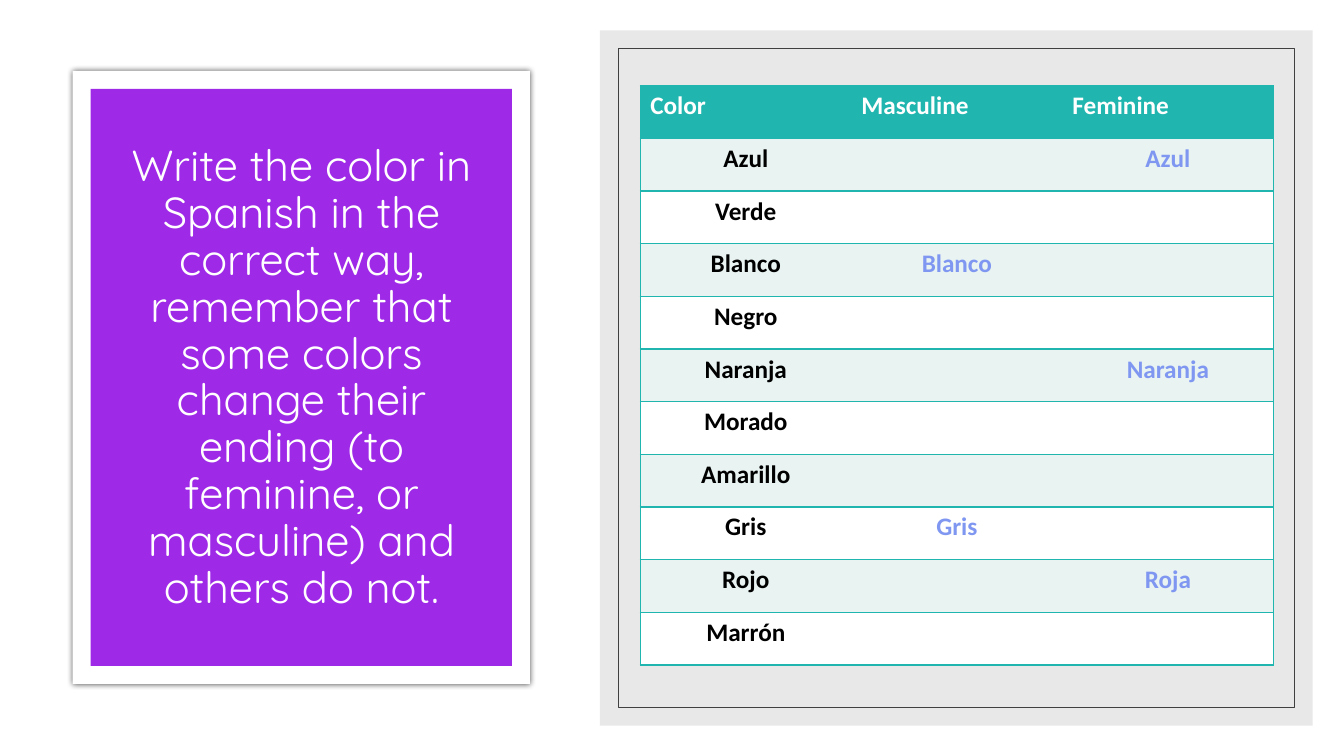
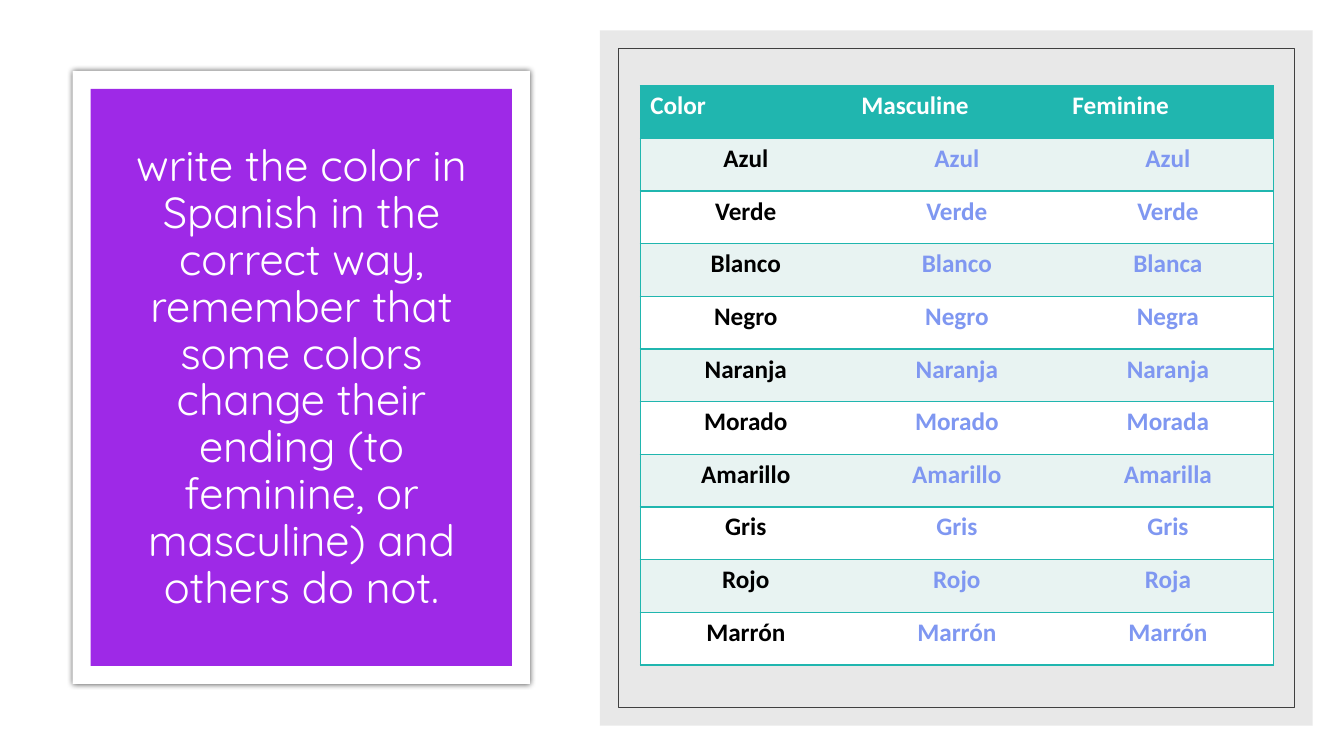
from lxml import etree
from pptx import Presentation
from pptx.dml.color import RGBColor
from pptx.enum.shapes import MSO_SHAPE
from pptx.enum.text import MSO_ANCHOR, PP_ALIGN
from pptx.oxml import parse_xml
from pptx.oxml.ns import nsdecls, qn
from pptx.util import Inches, Pt

RECT = MSO_SHAPE.RECTANGLE
MIDDLE = MSO_ANCHOR.MIDDLE
CENTER, LEFT = PP_ALIGN.CENTER, PP_ALIGN.LEFT

WHITE = RGBColor(0xFF, 0xFF, 0xFF)
BLACK = RGBColor(0x00, 0x00, 0x00)
PURPLE = RGBColor(0x9E, 0x29, 0xE7)
GRAY = RGBColor(0xD9, 0xD9, 0xD9)
DARK = RGBColor(0x40, 0x40, 0x40)
TEAL = RGBColor(0x20, 0xB6, 0xAF)
MINT = RGBColor(0xE8, 0xF3, 0xF2)
ANSWER = RGBColor(0x7F, 0x97, 0xF1)

UNIT = Inches(0.18)  # grid step, also the inset of each inner rectangle
CARD = (4, 3.9, 25.2, 33.8)
TITLE = (6, 7.22, 21.22, 27.28)
PANEL = (33.05, 1.67, 39.28, 38.33)
TABLE = (35.28, 4.72, 34.89, 31.94)
NO_STYLE = "{2D5ABB26-0587-4C30-8999-92F81FD0307C}"

HEADERS = ("Color", "Masculine", "Feminine")
COLORS = [
    ("Azul", "Azul"), ("Verde", "Verde"), ("Blanco", "Blanca"),
    ("Negro", "Negra"), ("Naranja", "Naranja"), ("Morado", "Morada"),
    ("Amarillo", "Amarilla"), ("Gris", "Gris"), ("Rojo", "Roja"),
    ("Marrón", "Marrón"),
]
ROWS = [HEADERS] + [(masc, masc, fem) for masc, fem in COLORS]
TASK = ("rite the color in Spanish in the correct way, remember that some "
        "colors change their ending (to feminine, or masculine) and others "
        "do not.")
ALL_ANSWERS = {(r, c) for r in range(1, len(ROWS)) for c in (1, 2)}
HINTS = {(1, 2), (3, 1), (5, 2), (8, 1), (9, 2)}
SLIDES = [("W" + TASK, HINTS), ("w" + TASK, ALL_ANSWERS)]


def add_box(s, area, inset=0, fill=None, line=None):
    """Add a rectangle on the grid, shrunk by inset units on every side."""
    x, y, w, h = area
    sides = (x + inset, y + inset, w - 2 * inset, h - 2 * inset)
    box = s.shapes.add_shape(RECT, *(int(v * UNIT) for v in sides))
    box.shadow.inherit = False
    if fill is None:
        box.fill.background()
    else:
        box.fill.solid()
        box.fill.fore_color.rgb = fill
    if line is None:
        box.line.fill.background()
    else:
        box.line.color.rgb = line
        box.line.width = Pt(0.5)
    return box


def add_borders(cell, sides):
    tcPr = cell._tc.get_or_add_tcPr()
    for i, side in enumerate(sides):
        tcPr.insert(i, parse_xml(
            f'<a:ln{side} {nsdecls("a")} w="{Pt(1)}"><a:solidFill>'
            f'<a:srgbClr val="{TEAL}"/></a:solidFill></a:ln{side}>'))


prs = Presentation()
prs.slide_width, prs.slide_height = Inches(13.33), Inches(7.5)

for task, shown in SLIDES:
    s = prs.slides.add_slide(prs.slide_layouts[6])

    card = add_box(s, CARD, fill=WHITE)
    effects = card._element.spPr.find(qn("a:effectLst"))
    effects.append(parse_xml(
        f'<a:outerShdw {nsdecls("a")} blurRad="{Pt(4)}" dist="0" dir="0">'
        '<a:srgbClr val="000000"><a:alpha val="66000"/></a:srgbClr>'
        '</a:outerShdw>'))
    add_box(s, CARD, inset=1, fill=PURPLE)

    title = s.shapes.add_textbox(*(int(v * UNIT) for v in TITLE))
    tf = title.text_frame
    tf.word_wrap = True
    tf.vertical_anchor = MIDDLE
    p = tf.paragraphs[0]
    p.text = task
    p.alignment = CENTER
    p.line_spacing = 0.9
    p.font.name, p.font.size = "Quicksand", Pt(31)
    p.font.color.rgb = WHITE

    panel = add_box(s, PANEL, fill=GRAY)
    tint = panel._element.spPr.find(qn("a:solidFill"))[0]
    etree.SubElement(tint, qn("a:alpha"), val="60000")
    add_box(s, PANEL, inset=1, line=DARK)

    table = s.shapes.add_table(len(ROWS), len(HEADERS),
                               *(int(v * UNIT) for v in TABLE)).table
    table.horz_banding = table.first_row = False
    table._tbl.tblPr.find(qn("a:tableStyleId")).text = NO_STYLE
    for r, row in enumerate(ROWS):
        for c, word in enumerate(row):
            cell = table.cell(r, c)
            cell.fill.solid()
            cell.fill.fore_color.rgb = TEAL if r == 0 else MINT if r % 2 else WHITE
            add_borders(cell, ("LTB", "TB", "RTB")[c])
            p = cell.text_frame.paragraphs[0]
            if r == 0 or c == 0 or (r, c) in shown:
                p.text = word
            p.alignment = CENTER if r else LEFT
            p.font.name, p.font.size, p.font.bold = "Calibri", Pt(18), True
            p.font.color.rgb = WHITE if r == 0 else ANSWER if c else BLACK

prs.save("out.pptx")
